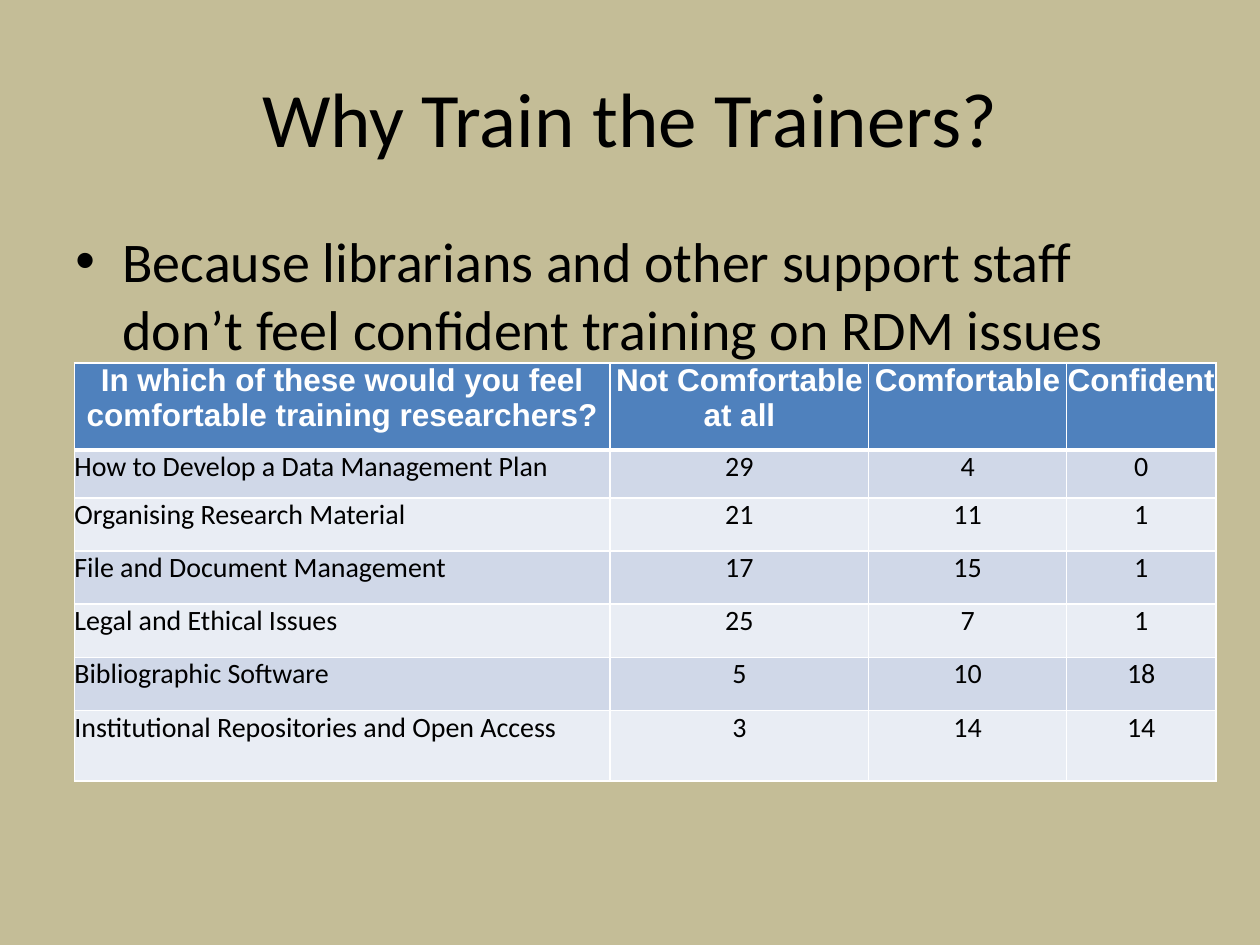
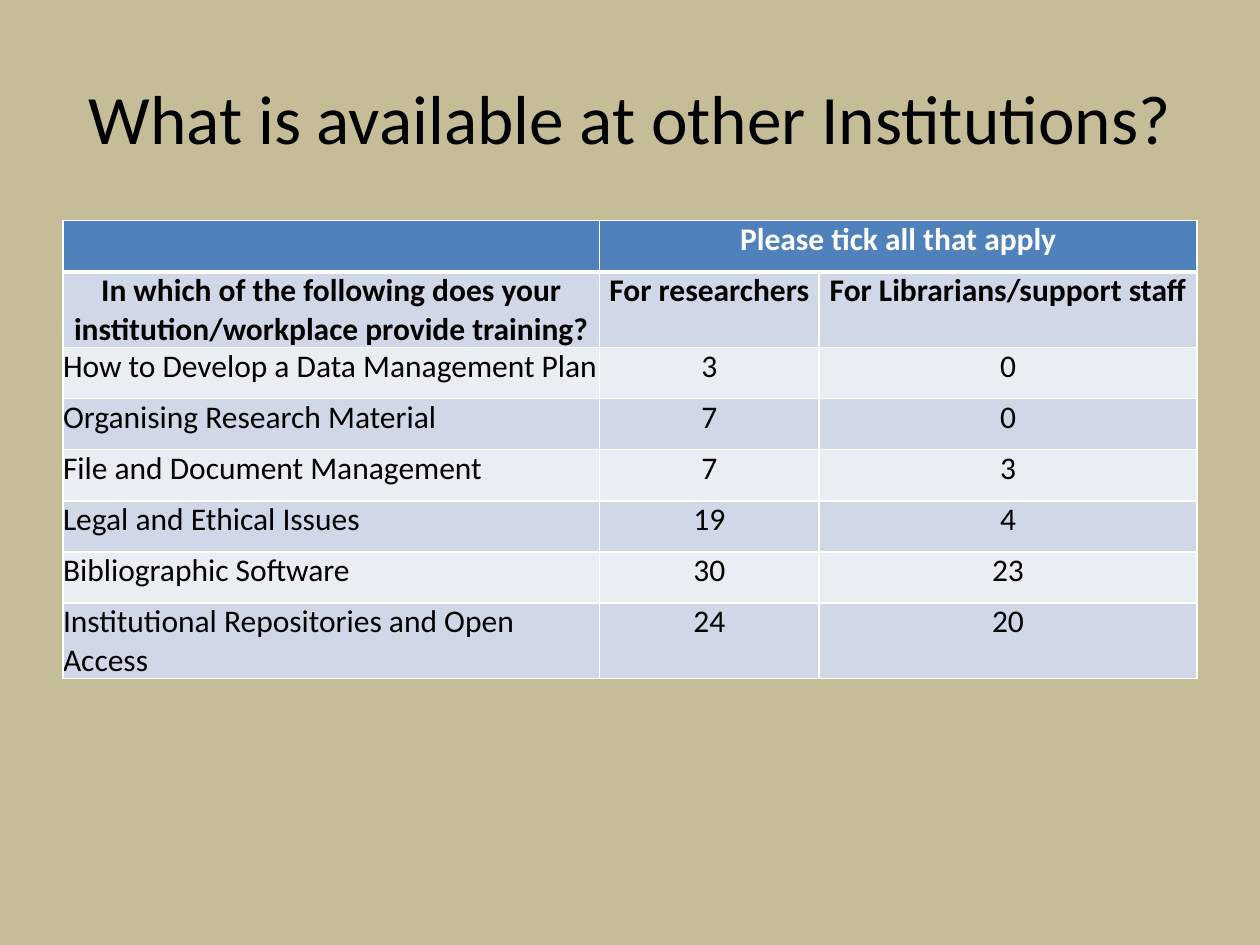
from pptx import Presentation
from pptx.dml.color import RGBColor
from pptx.enum.text import MSO_ANCHOR as Anchor, PP_ALIGN as Align
from pptx.oxml import parse_xml as xml
from pptx.oxml.ns import nsdecls as names
from pptx.util import Cm, Pt


def hue(code):
    return RGBColor.from_string(code)


def put(para, text, align, color, **look):
    para.alignment = align
    if text:
        run = para.add_run()
        run.text = text
        run.font.color.rgb = hue(color)
        for key, val in look.items():
            setattr(run.font, key, val)


SAND, BLUE, WHITE, BLACK = "C4BD97", "4F81BD", "FFFFFF", "000000"
BANDS = ["E9EDF4", "D0D8E8"]
EDGE = {"margin_left": 0, "margin_right": 0, "margin_top": 0, "margin_bottom": 0}
TOPICS = [
    "How to Develop a Data Management Plan",
    "Organising Research Material",
    "File and Document Management",
    "Legal and Ethical Issues",
    "Bibliographic Software",
    "Institutional Repositories and Open Access",
]

pages = [
    {
        "title": "Why Train the Trainers?",
        "size": 44,
        "body": "Because librarians and other support staff don’t feel confident training on RDM issues",
        "left": 1.5,
        "top": 7.32,
        "cols": [10.8, 5.21, 3.99, 3.01],
        "rows": [1.75, 0.97] + [1.07] * 4 + [1.42],
        "heads": [["In which of these would you feel comfortable training researchers?",
                   "Not Comfortable at all", "Comfortable", "Confident"]],
        "data": [(29, 4, 0), (21, 11, 1), (17, 15, 1), (25, 7, 1), (5, 10, 18), (3, 14, 14)],
        "head": {"name": "Arial", "size": Pt(18), "bold": True},
        "cell": {"name": "Calibri", "size": Pt(16), "bold": False},
    },
    {
        "title": "What is available at other Institutions?",
        "size": 39.6,
        "left": 1.27,
        "top": 4.45,
        "cols": [10.82, 4.42, 7.62],
        "rows": [1.03] * 8,
        "heads": [["", "Please tick all that apply", ""],
                  ["In which of the following does your institution/workplace provide training?",
                   "For researchers", "For Librarians/support staff"]],
        "data": [(3, 0), (7, 0), (7, 3), (19, 4), (30, 23), (24, 20)],
        "span": (1, 2),
        "head": {"name": "Calibri", "size": Pt(18), "bold": True},
        "cell": {"name": "Calibri", "size": Pt(18), "bold": False},
    },
]

deck = Presentation()
deck.slide_width, deck.slide_height = Cm(25.4), Cm(19.05)

for page in pages:
    slide = deck.slides.add_slide(deck.slide_layouts[6])
    back = slide.background.fill
    back.solid()
    back.fore_color.rgb = hue(SAND)

    frame = slide.shapes.add_textbox(Cm(1.27), Cm(0.76), Cm(22.86), Cm(3.18)).text_frame
    frame.word_wrap = True
    frame.vertical_anchor = Anchor.MIDDLE
    put(frame.paragraphs[0], page["title"], Align.CENTER, BLACK, name="Calibri", size=Pt(page["size"]))

    if "body" in page:
        frame = slide.shapes.add_textbox(Cm(1.27), Cm(4.45), Cm(22.86), Cm(12.57)).text_frame
        frame.word_wrap = True
        para = frame.paragraphs[0]
        put(para, page["body"], Align.LEFT, BLACK, name="Calibri", size=Pt(32))
        props = para._p.get_or_add_pPr()
        props.set("marL", str(Cm(0.95)))
        props.set("indent", str(-Cm(0.95)))
        props.append(xml(f'<a:buFont {names("a")} typeface="Arial"/>'))
        props.append(xml(f'<a:buChar {names("a")} char="•"/>'))

    cols, rows, heads = page["cols"], page["rows"], page["heads"]
    grid = slide.shapes.add_table(
        len(rows), len(cols), Cm(page["left"]), Cm(page["top"]), Cm(sum(cols)), Cm(sum(rows))
    ).table
    for col, width in zip(grid.columns, cols):
        col.width = Cm(width)
    for row, height in zip(grid.rows, rows):
        row.height = Cm(height)
    if "span" in page:
        first, last = page["span"]
        grid.cell(0, first).merge(grid.cell(0, last))

    lines = heads + [[topic, *vals] for topic, vals in zip(TOPICS, page["data"])]
    for r, line in enumerate(lines):
        for c, text in enumerate(line):
            cell = grid.cell(r, c)
            for key, val in EDGE.items():
                setattr(cell, key, val)
            props = cell._tc.get_or_add_tcPr()
            for side in "LRTB":
                width = Pt(3) if (side, r) in [("B", 0), ("T", 1)] else Pt(1)
                props.append(xml(
                    f'<a:ln{side} {names("a")} w="{width}"><a:solidFill>'
                    f'<a:srgbClr val="{WHITE}"/></a:solidFill></a:ln{side}>'
                ))
            cell.fill.solid()
            cell.fill.fore_color.rgb = hue(BANDS[r % 2] if r else BLUE)
            top = r < len(heads)
            put(
                cell.text_frame.paragraphs[0],
                str(text),
                Align.CENTER if top or c else Align.LEFT,
                BLACK if r else WHITE,
                **page["head" if top else "cell"],
            )

deck.save("out.pptx")
